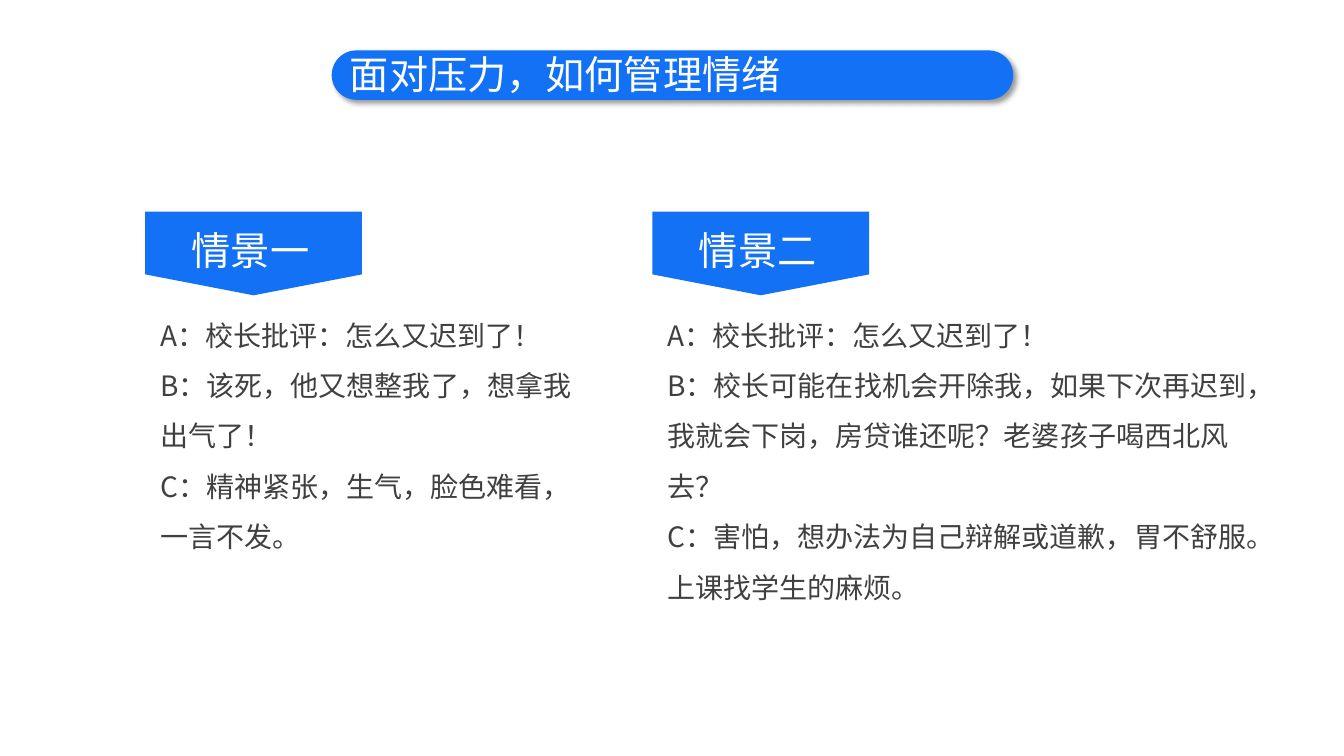
from dataclasses import dataclass

from lxml import etree
from pptx import Presentation
from pptx import util as u
from pptx.dml.color import RGBColor
from pptx.enum import shapes, text
from pptx.oxml import ns


@dataclass(frozen=True)
class Theme:
    font: str = "Noto Sans CJK SC"
    blue: str = "1371F6"
    white: str = "FFFFFF"
    gray: str = "404040"
    head: int = 28
    body: int = 20


THEME = Theme()
SCENES = [
    (1.44, 4.28, 2.63, "情景一", [
        "A：校长批评：怎么又迟到了！",
        "B：该死，他又想整我了，想拿我出气了！",
        "C：精神紧张，生气，脸色难看，一言不发。",
    ]),
    (6.47, 5.95, 3.13, "情景二", [
        "A：校长批评：怎么又迟到了！",
        "B：校长可能在找机会开除我，如果下次再迟到，我就会下岗，房贷谁还呢？老婆孩子喝西北风去？",
        "C：害怕，想办法为自己辩解或道歉，胃不舒服。上课找学生的麻烦。",
    ]),
]


def inches(*sizes):
    return [u.Inches(size) for size in sizes]


def write(box, lines, *, size, color, align=text.PP_ALIGN.LEFT,
          anchor=text.MSO_ANCHOR.TOP, space=1.0):
    frame = box.text_frame
    frame.word_wrap = True
    frame.auto_size = text.MSO_AUTO_SIZE.NONE
    frame.vertical_anchor = anchor
    frame.text = "\n".join(lines)
    for par in frame.paragraphs:
        par.alignment = align
        par.line_spacing = space
        for run in par.runs:
            run.font.name = THEME.font
            run.font.size = u.Pt(size)
            run.font.color.rgb = RGBColor.from_string(color)
            east = etree.SubElement(run.font._element, ns.qn("a:ea"))
            east.set("typeface", THEME.font)


def plain(parent, kind, box, adjust):
    shape = parent.add_shape(kind, *inches(*box))
    shape.adjustments[0] = adjust
    shape.shadow.inherit = False
    shape.fill.solid()
    shape.fill.fore_color.rgb = RGBColor.from_string(THEME.blue)
    shape.line.fill.background()
    return shape


def shade(shape):
    effects = shape.element.spPr.find(ns.qn("a:effectLst"))
    outer = etree.SubElement(
        effects, ns.qn("a:outerShdw"), blurRad=str(u.Pt(4)),
        dist=str(u.Pt(3)), dir="2700000", algn="tl", rotWithShape="0")
    color = etree.SubElement(outer, ns.qn("a:srgbClr"), val="000000")
    etree.SubElement(color, ns.qn("a:alpha"), val="40000")


def header(slide, left, top, width, height):
    pill = plain(slide.shapes, shapes.MSO_SHAPE.ROUNDED_RECTANGLE,
                 (left, top, width, height), 0.5)
    shade(pill)
    title = slide.shapes.title
    title.left, title.top, title.width, title.height = inches(
        left + 0.08, top - 0.05, width - 0.16, height + 0.08)
    write(title, ["面对压力，如何管理情绪"], size=THEME.head,
          color=THEME.white, align=text.PP_ALIGN.JUSTIFY)
    title.element.addprevious(pill.element)


def badge(slide, left, top, width, height, label):
    group = slide.shapes.add_group_shape()
    shift = (width - height) / 2
    flag = plain(group.shapes, shapes.MSO_SHAPE.PENTAGON,
                 (left + shift, top - shift, height, width), 0.25)
    flag.rotation = 90
    box = group.shapes.add_textbox(
        *inches(left - 0.06, top - 0.04, width + 0.06, height))
    write(box, [label], size=THEME.head, color=THEME.white,
          align=text.PP_ALIGN.CENTER, anchor=text.MSO_ANCHOR.MIDDLE)


def scene(slide, left, top, width, height, label, lines):
    badge(slide, left, top, 2.15, 0.83, label)
    box = slide.shapes.add_textbox(
        *inches(left + 0.05, top + 0.84, width, height))
    write(box, lines, size=THEME.body, color=THEME.gray, space=1.5)


def main():
    deck = Presentation()
    deck.slide_width, deck.slide_height = inches(13.33, 7.5)
    slide = deck.slides.add_slide(deck.slide_layouts.get_by_name("Title Only"))
    header(slide, 3.29, 0.5, 6.76, 0.49)
    for left, width, height, label, lines in SCENES:
        scene(slide, left, 2.1, width, height, label, lines)
    deck.save("out.pptx")


if __name__ == "__main__":
    main()
